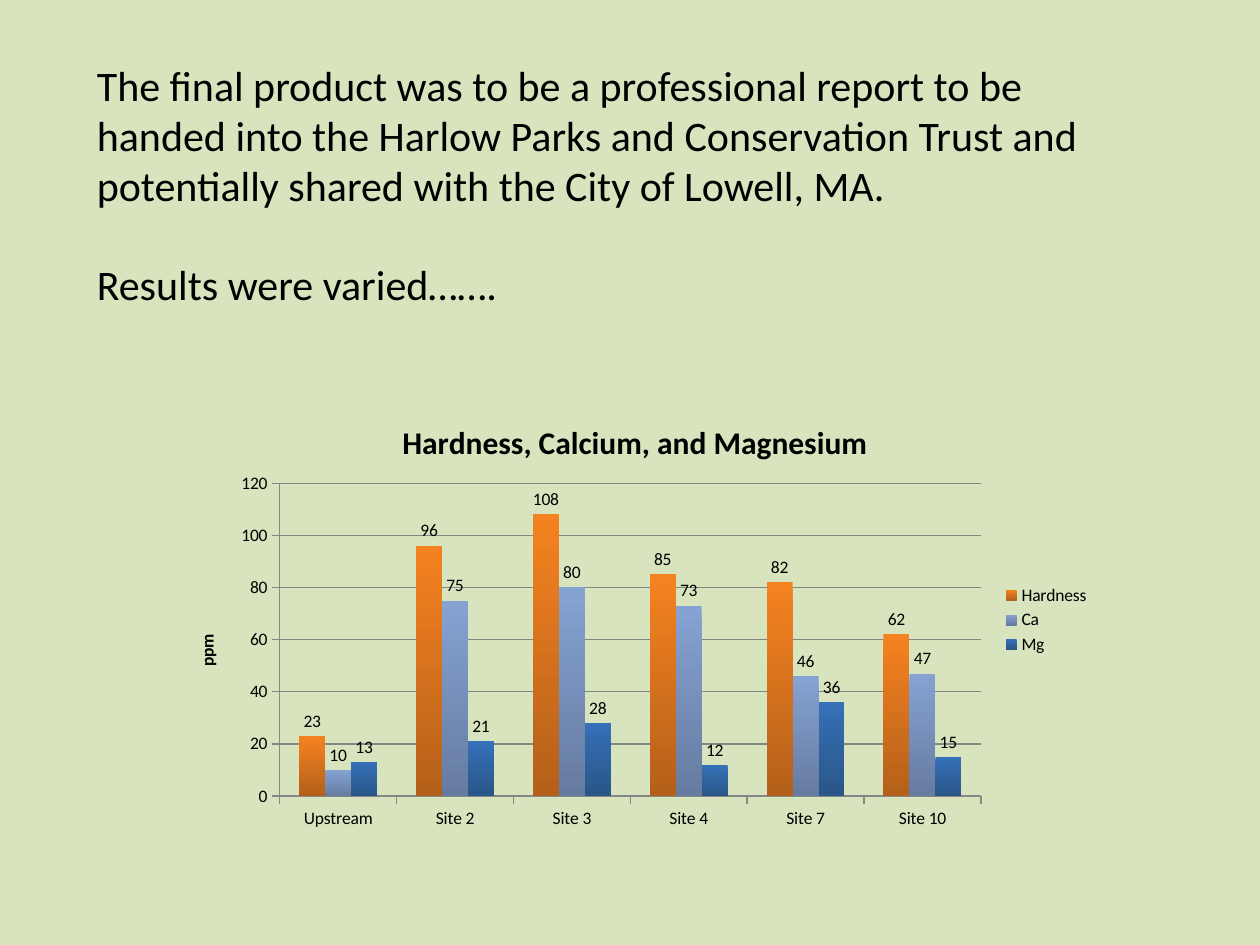
from lxml import etree
from pptx import Presentation
from pptx.chart.data import CategoryChartData
from pptx.dml.color import RGBColor
from pptx.enum.chart import XL_CHART_TYPE as ChartType
from pptx.enum.chart import XL_LABEL_POSITION as LabelPosition
from pptx.enum.chart import XL_LEGEND_POSITION as LegendPosition
from pptx.enum.chart import XL_TICK_MARK as TickMark
from pptx.enum.text import MSO_AUTO_SIZE as AutoSize
from pptx.oxml.ns import qn
from pptx.util import Inches, Pt

COLORS = {
    "background": "D7E4BD",
    "text": "000000",
    "axis": "868686",
}
SITES = ["Upstream", "Site 2", "Site 3", "Site 4", "Site 7", "Site 10"]
# Name: values, top and bottom colour of the columns
MEASUREMENTS = {
    "Hardness": ([23, 96, 108, 85, 82, 62], ("F58220", "B4601A")),
    "Ca": ([10, 75, 80, 73, 46, 47], ("86A2D3", "667BA0")),
    "Mg": ([13, 21, 28, 12, 36, 15], ("3570B8", "2A5688")),
}


class SlideBuilder:
    font_name = "Calibri"

    def __init__(self, slide):
        self.slide = slide

    def set_background(self):
        fill = self.slide.background.fill
        fill.solid()
        fill.fore_color.rgb = RGBColor.from_string(COLORS["background"])

    def style_font(self, font, size, bold=False):
        font.name = self.font_name
        font.size = Pt(size)
        font.bold = bold
        font.color.rgb = RGBColor.from_string(COLORS["text"])

    def add_text(self, text, left, top, width, height):
        box = self.slide.shapes.add_textbox(
            Inches(left), Inches(top), Inches(width), Inches(height))
        frame = box.text_frame
        frame.word_wrap = True
        frame.auto_size = AutoSize.SHAPE_TO_FIT_TEXT
        paragraph = frame.paragraphs[0]
        paragraph.text = text
        self.style_font(paragraph.font, 24)

    def add_title(self, owner, text, size):
        """Give a chart or an axis a bold title."""
        frame = (owner.chart_title if hasattr(owner, "chart_title")
                 else owner.axis_title).text_frame
        frame.text = text
        self.style_font(frame.paragraphs[0].font, size, bold=True)

    def style_axis(self, axis):
        axis.major_tick_mark = TickMark.OUTSIDE
        axis.minor_tick_mark = TickMark.NONE
        axis.format.line.color.rgb = RGBColor.from_string(COLORS["axis"])

    def style_series(self, series, gradient_colors):
        fill = series.format.fill
        fill.gradient()
        fill.gradient_angle = 270
        for stop, color in zip(fill.gradient_stops, gradient_colors):
            stop.color.rgb = RGBColor.from_string(color)
        series.invert_if_negative = False
        labels = series.data_labels
        labels.show_value = True
        labels.position = LabelPosition.OUTSIDE_END
        self.style_font(labels.font, 10)

    def place_plot(self, chart, **fractions):
        """Fix the inner plot area, in fractions of the chart frame."""
        plot_area = chart._chartSpace.chart.plotArea
        for old_layout in plot_area.findall(qn("c:layout")):
            plot_area.remove(old_layout)
        layout = etree.Element(qn("c:layout"))
        manual = etree.SubElement(layout, qn("c:manualLayout"))
        settings = {"layoutTarget": "inner", "xMode": "edge", "yMode": "edge"}
        for name, value in {**settings, **fractions}.items():
            etree.SubElement(manual, qn(f"c:{name}")).set("val", str(value))
        plot_area.insert(0, layout)

    def add_column_chart(self, title, unit, left, top, width, height):
        data = CategoryChartData()
        data.categories = SITES
        for name, (values, _) in MEASUREMENTS.items():
            data.add_series(name, values)
        chart = self.slide.shapes.add_chart(
            ChartType.COLUMN_CLUSTERED, Inches(left), Inches(top),
            Inches(width), Inches(height), data).chart
        self.style_font(chart.font, 10)
        self.add_title(chart, title, 18)

        chart.has_legend = True
        chart.legend.position = LegendPosition.RIGHT
        chart.legend.include_in_layout = False

        value_axis = chart.value_axis
        value_axis.minimum_scale, value_axis.maximum_scale = 0, 120
        value_axis.major_unit = 20
        self.add_title(value_axis, unit, 10)
        for axis in (chart.category_axis, value_axis):
            self.style_axis(axis)
        grid_line = value_axis.major_gridlines.format.line
        grid_line.color.rgb = RGBColor.from_string(COLORS["axis"])

        plot = chart.plots[0]
        plot.gap_width = 150
        plot.overlap = 0
        plot.vary_by_categories = False
        for series in plot.series:
            self.style_series(series, MEASUREMENTS[series.name][1])
        self.place_plot(chart, x=0.12, y=0.19, w=0.75, h=0.71)


def main():
    presentation = Presentation()
    presentation.slide_width = Inches(10)
    presentation.slide_height = Inches(7.5)
    blank_layout = presentation.slide_layouts[6]
    builder = SlideBuilder(presentation.slides.add_slide(blank_layout))

    builder.set_background()
    builder.add_text(
        "The final product was to be a professional report to be handed into "
        "the Harlow Parks and Conservation Trust and potentially shared with "
        "the City of Lowell, MA.", 0.67, 0.42, 8.42, 1.31)
    builder.add_text("Results were varied…….", 0.67, 2, 8.42, 0.5)
    builder.add_column_chart(
        "Hardness, Calcium, and Magnesium", "ppm", 1.33, 3.17, 7.42, 3.5)
    presentation.save("out.pptx")


if __name__ == "__main__":
    main()
